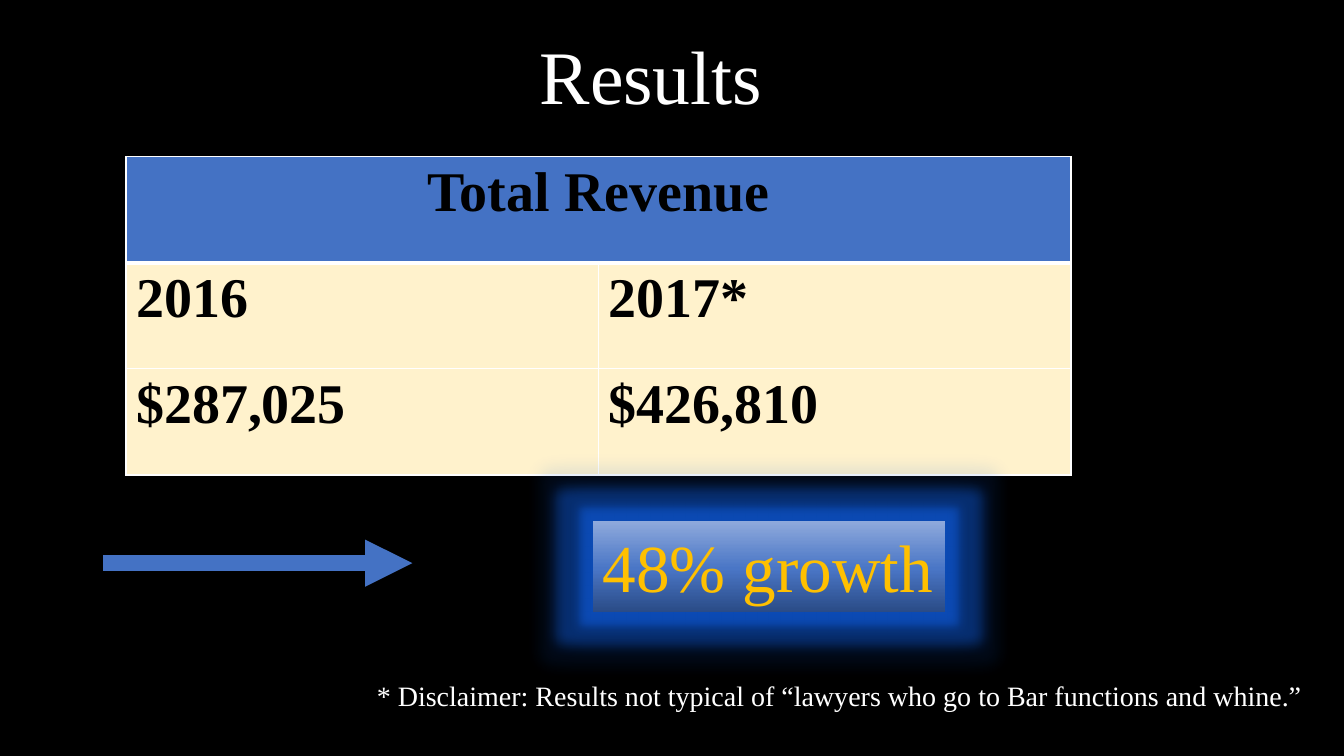
from lxml import etree
from pptx import Presentation
from pptx.dml.color import RGBColor
from pptx.enum.shapes import MSO_CONNECTOR, MSO_SHAPE
from pptx.enum.text import MSO_ANCHOR, PP_ALIGN
from pptx.oxml import parse_xml
from pptx.oxml.ns import nsdecls, qn
from pptx.util import Pt

STRAIGHT, RECT = MSO_CONNECTOR.STRAIGHT, MSO_SHAPE.RECTANGLE
TOP, BOTTOM = MSO_ANCHOR.TOP, MSO_ANCHOR.BOTTOM
LEFT, CENTER, RIGHT = PP_ALIGN.LEFT, PP_ALIGN.CENTER, PP_ALIGN.RIGHT

BLACK = RGBColor(0x00, 0x00, 0x00)
WHITE = RGBColor(0xFF, 0xFF, 0xFF)
BLUE = RGBColor(0x44, 0x72, 0xC4)
CREAM = RGBColor(0xFF, 0xF2, 0xCC)
GOLD = RGBColor(0xFF, 0xC0, 0x00)
GLOW = RGBColor(0x0F, 0x5F, 0xE6)
GRADIENT = [(0, RGBColor(0x2A, 0x4B, 0x86)),
            (48, RGBColor(0x4A, 0x76, 0xC6)),
            (100, RGBColor(0x8F, 0xAA, 0xDC))]
FONT = "Times New Roman"

TITLE = "Results"
DISCLAIMER = ("* Disclaimer: Results not typical of "
              "“lawyers who go to Bar functions and whine.”")
REVENUE = [["Total Revenue", ""],
           ["2016", "2017*"],
           ["$287,025", "$426,810"]]
GROWTH = "48% growth"

# left, top, width, height in points
TITLE_BOX = (105, 24, 720, 66)
DISCLAIMER_BOX = (96, 484, 841.5, 46)
TABLE_BOX = (90, 112, 675, 227.25)
GROWTH_BOX = (423.5, 372, 251.5, 65.5)
ARROW = (73.5, 402.25, 294.5, 402.25)


def points(values):
    return [Pt(v) for v in values]


def write(tf, text, size, color, align, bold=False):
    p = tf.paragraphs[0]
    p.alignment = align
    r = p.add_run()
    r.text = text
    r.font.name, r.font.size, r.font.bold = FONT, Pt(size), bold
    r.font.color.rgb = color
    return p


def fill_placeholder(sp, box, text, size, align, anchor):
    sp.left, sp.top, sp.width, sp.height = points(box)
    sp.text_frame.vertical_anchor = anchor
    write(sp.text_frame, text, size, WHITE, align).line_spacing = 0.9


def set_borders(cell, bottom):
    tcPr = cell._tc.get_or_add_tcPr()
    widths = {"lnL": 1, "lnR": 1, "lnT": 1, "lnB": bottom}
    for i, (side, width) in enumerate(widths.items()):
        tcPr.insert(i, parse_xml(
            f'<a:{side} {nsdecls("a")} w="{Pt(width)}"><a:solidFill>'
            f'<a:srgbClr val="{WHITE}"/></a:solidFill></a:{side}>'))


prs = Presentation()
prs.slide_width, prs.slide_height = Pt(960), Pt(540)
s = prs.slides.add_slide(prs.slide_layouts[0])
s.background.fill.solid()
s.background.fill.fore_color.rgb = BLACK

fill_placeholder(s.shapes.title, TITLE_BOX, TITLE, 54, CENTER, BOTTOM)
fill_placeholder(s.placeholders[1], DISCLAIMER_BOX, DISCLAIMER, 20, RIGHT, TOP)

# Revenue table
rows, cols = len(REVENUE), len(REVENUE[0])
table = s.shapes.add_table(rows, cols, *points(TABLE_BOX)).table
table.cell(0, 0).merge(table.cell(0, cols - 1))
for i, row in enumerate(REVENUE):
    header = i == 0
    for j, text in enumerate(row):
        cell = table.cell(i, j)
        cell.fill.solid()
        cell.fill.fore_color.rgb = BLUE if header else CREAM
        set_borders(cell, 3 if header else 1)
        if text:
            write(cell.text_frame, text, 40, BLACK,
                  CENTER if header else LEFT, bold=True)

# Arrow
arrow = s.shapes.add_connector(STRAIGHT, *points(ARROW))
arrow.line.color.rgb = BLUE
arrow.line.width = Pt(11.25)
etree.SubElement(arrow.line._get_or_add_ln(), qn("a:tailEnd"), type="triangle")
etree.SubElement(arrow._element.spPr, qn("a:effectLst"))

# Growth box with gradient and glow
growth = s.shapes.add_shape(RECT, *points(GROWTH_BOX))
growth.line.fill.background()
stops = "".join(f'<a:gs pos="{pos * 1000}"><a:srgbClr val="{color}"/></a:gs>'
                for pos, color in GRADIENT)
spPr = growth._element.spPr
spPr.insert(2, parse_xml(
    f'<a:gradFill {nsdecls("a")}><a:gsLst>{stops}</a:gsLst>'
    '<a:lin ang="16200000" scaled="0"/></a:gradFill>'))
glow_color = f'<a:srgbClr val="{GLOW}"><a:alpha val="40000"/></a:srgbClr>'
spPr.append(parse_xml(
    f'<a:effectLst {nsdecls("a")}><a:glow rad="{Pt(18)}">{glow_color}</a:glow>'
    f'<a:outerShdw blurRad="{Pt(5)}" sx="107000" sy="129000" algn="ctr">'
    f'{glow_color}</a:outerShdw></a:effectLst>'))
growth.text_frame.word_wrap = False
growth.text_frame.vertical_anchor = TOP
write(growth.text_frame, GROWTH, 48, GOLD, LEFT)

prs.save("out.pptx")
